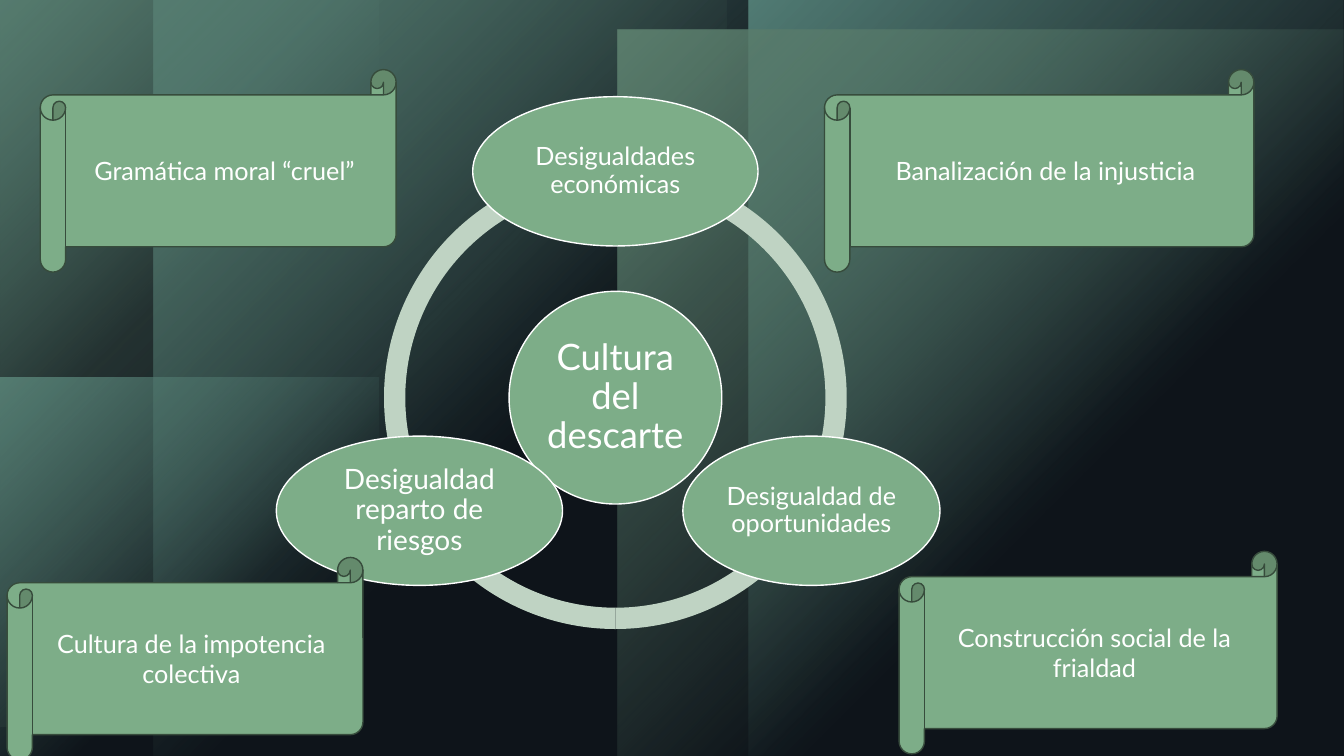
from math import cos, radians, sin

from lxml import etree
from pptx import Presentation
from pptx import util as u
from pptx.dml.color import RGBColor
from pptx.enum import shapes, text
from pptx.oxml.ns import qn

BLACK = RGBColor(0x00, 0x00, 0x00)
WHITE = RGBColor(0xFF, 0xFF, 0xFF)
TEAL = RGBColor(0x6F, 0xAC, 0x96)
GREEN = RGBColor(0x7D, 0xAD, 0x88)
PALE_GREEN = RGBColor(0xBF, 0xD3, 0xC3)
DARK_GREEN = RGBColor(0x37, 0x4C, 0x3C)
SLATE = RGBColor(0x24, 0x33, 0x41)

FONT = "Lato"
WIDTH, HEIGHT = u.Inches(13.333), u.Inches(7.5)
KIND = shapes.MSO_SHAPE

# All positions and sizes are percentages of the slide's width and height.
# Backdrop panels: left, top, width, height, colour, opacity of the bright corner
PANELS = [
    (11.4, 0, 44.3, 100, TEAL, 100),
    (55.7, 0, 44.3, 100, TEAL, 100),
    (0, 50, 28.13, 50, TEAL, 100),
    (0, 0, 28.13, 50, TEAL, 100),
    (45.95, 3.87, 54.05, 96.13, GREEN, 100),
    (0, 0, 54.05, 96.13, GREEN, 60),
]

# Cycle: shared centre, ring size, distance from the centre to each node
CENTRE_X, CENTRE_Y = 45.79, 52.6
RING_W, RING_H = 34.43, 61.2
REACH_X, REACH_Y = 16.84, 29.93
NODE_H = 19.75
ARCS = [(90, 162), (18, 90), (162, 18)]
# Nodes: angle, width, text size, wording
NODES = [
    (-90, 21.23, 18, "Desigualdades económicas"),
    (30, 19.13, 18, "Desigualdad de oportunidades"),
    (150, 21.3, 20, "Desigualdad reparto de riesgos"),
]

# Scrolls: left, top, width, wording
SCROLL_H = 26.8
SCROLLS = [
    (61.35, 9.2, 31.95, "Banalización de la injusticia"),
    (3, 9.2, 26.48, "Gramática moral “cruel”"),
    (66.9, 72.93, 28.13, "Construcción social de la frialdad"),
    (0.53, 73.73, 26.48, "Cultura de la impotencia colectiva"),
]


def add_box(page, kind, left, top, width, height, colour, line=None):
    box = page.shapes.add_shape(
        kind, int(WIDTH * left / 100), int(HEIGHT * top / 100),
        int(WIDTH * width / 100), int(HEIGHT * height / 100))
    box.shadow.inherit = False
    box.fill.solid()
    box.fill.fore_color.rgb = colour
    if line is None:
        box.line.fill.background()
    else:
        box.line.color.rgb = line
        box.line.width = u.Pt(1)
    return box


def add_centred(page, kind, x, y, width, height, colour, line=None):
    return add_box(page, kind, x - width / 2, y - height / 2, width, height, colour, line)


def set_alpha(colour_element, percent):
    etree.SubElement(colour_element, qn("a:alpha")).set("val", str(percent * 1000))


def fade_from_corner(box, colour, opacity):
    """Gradient from the top left corner, clear from 60 % onwards."""
    gradient = etree.Element(qn("a:gradFill"), rotWithShape="1")
    stops = etree.SubElement(gradient, qn("a:gsLst"))
    for position, alpha in ((0, opacity), (60, 0)):
        stop = etree.SubElement(stops, qn("a:gs"), pos=str(position * 1000))
        set_alpha(etree.SubElement(stop, qn("a:srgbClr"), val=str(colour)), alpha)
    route = etree.SubElement(gradient, qn("a:path"), path="circle")
    etree.SubElement(route, qn("a:fillToRect"), r="100000", b="100000")
    props = box.element.spPr
    props.replace(props.find(qn("a:solidFill")), gradient)


def write(box, wording, size, spacing=None, inset=None):
    frame = box.text_frame
    frame.word_wrap = True
    frame.vertical_anchor = text.MSO_ANCHOR.MIDDLE
    if inset is not None:
        frame.margin_left = frame.margin_right = u.Inches(inset)
        frame.margin_top = frame.margin_bottom = u.Inches(inset)
    para = frame.paragraphs[0]
    para.alignment = text.PP_ALIGN.CENTER
    if spacing is not None:
        para.line_spacing = spacing
    span = para.add_run()
    span.text = wording
    span.font.size = u.Pt(size)
    span.font.name = FONT
    span.font.color.rgb = WHITE


def add_backdrop(page):
    page.background.fill.solid()
    page.background.fill.fore_color.rgb = BLACK
    for left, top, width, height, colour, opacity in PANELS:
        panel = add_box(page, KIND.RECTANGLE, left, top, width, height, colour)
        fade_from_corner(panel, colour, opacity)
    veil = add_box(page, KIND.RECTANGLE, 0, 0, 100, 100, SLATE)
    set_alpha(veil.element.spPr.find(qn("a:solidFill"))[0], 40)


def add_arc(page, start, end):
    arc = add_centred(page, KIND.BLOCK_ARC, CENTRE_X, CENTRE_Y, RING_W, RING_H, PALE_GREEN)
    # Angles are stored in 60000ths of a degree, adjustments in 100000ths
    arc.adjustments[0] = start * 0.6
    arc.adjustments[1] = end * 0.6
    arc.adjustments[2] = 0.046


def add_oval(page, x, y, width, height, wording, size, inset):
    oval = add_centred(page, KIND.OVAL, x, y, width, height, GREEN, WHITE)
    write(oval, wording, size, 0.9, inset)


def add_cycle(page):
    for start, end in ARCS:
        add_arc(page, start, end)
    add_oval(page, CENTRE_X, CENTRE_Y, 15.83, 28.13, "Cultura del descarte", 26, 0.04)
    for angle, width, size, wording in NODES:
        x = CENTRE_X + REACH_X * cos(radians(angle))
        y = CENTRE_Y + REACH_Y * sin(radians(angle))
        add_oval(page, x, y, width, NODE_H, wording, size, 0.03)


def add_scroll(page, left, top, width, wording):
    scroll = add_box(page, KIND.HORIZONTAL_SCROLL, left, top, width, SCROLL_H,
                     GREEN, DARK_GREEN)
    write(scroll, wording, 18)


def main():
    deck = Presentation()
    deck.slide_width, deck.slide_height = WIDTH, HEIGHT
    page = deck.slides.add_slide(deck.slide_layouts[6])
    add_backdrop(page)
    add_cycle(page)
    for scroll in SCROLLS:
        add_scroll(page, *scroll)
    deck.save("out.pptx")


if __name__ == "__main__":
    main()
